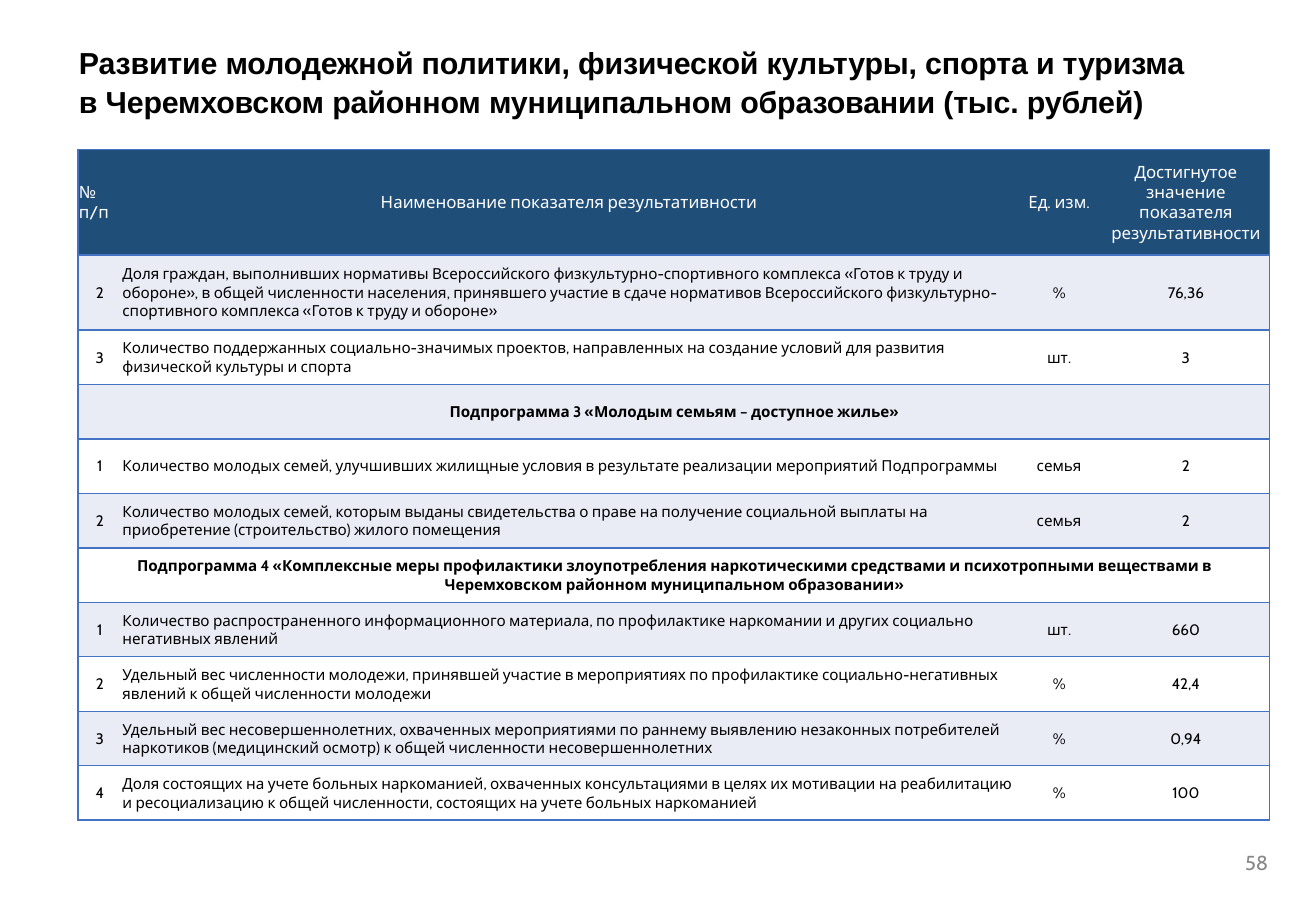
from lxml.etree import SubElement
from pptx import Presentation
from pptx.dml.color import RGBColor
from pptx.enum.text import MSO_ANCHOR, MSO_AUTO_SIZE, PP_ALIGN
from pptx.oxml.ns import qn
from pptx.util import Cm, Pt

BLACK = RGBColor(0x00, 0x00, 0x00)
WHITE = RGBColor(0xFF, 0xFF, 0xFF)
GRAY = RGBColor(0x88, 0x88, 0x88)
NAVY = RGBColor(0x1F, 0x4E, 0x79)
BLUE = RGBColor(0x44, 0x72, 0xC4)
BAND = RGBColor(0xE9, 0xEB, 0xF5)
NO_GRID_STYLE = "{2D5ABB26-0587-4C30-8999-92F81FD0307C}"

TITLE = ("Развитие молодежной политики, физической культуры, спорта и туризма "
         "в Черемховском районном муниципальном образовании (тыс. рублей)")
PAGE = "58"
ROWS = [
    ("№ п/п", "Наименование показателя результативности", "Ед. изм.",
     "Достигнутое значение показателя результативности"),
    ("2", "Доля граждан, выполнивших нормативы Всероссийского физкультурно-спортивного "
     "комплекса «Готов к труду и обороне», в общей численности населения, принявшего "
     "участие в сдаче нормативов Всероссийского физкультурно-спортивного комплекса "
     "«Готов к труду и обороне»", "%", "76,36"),
    ("3", "Количество поддержанных социально-значимых проектов, направленных на создание "
     "условий для развития физической культуры и спорта", "шт.", "3"),
    ("Подпрограмма 3 «Молодым семьям – доступное жилье»",),
    ("1", "Количество молодых семей, улучшивших жилищные условия в результате реализации "
     "мероприятий Подпрограммы", "семья", "2"),
    ("2", "Количество молодых семей, которым выданы свидетельства о праве на получение "
     "социальной выплаты на приобретение (строительство) жилого помещения", "семья", "2"),
    ("Подпрограмма 4 «Комплексные меры профилактики злоупотребления наркотическими "
     "средствами и психотропными веществами в Черемховском районном муниципальном "
     "образовании»",),
    ("1", "Количество распространенного информационного материала, по профилактике "
     "наркомании и других социально негативных явлений", "шт.", "660"),
    ("2", "Удельный вес численности молодежи, принявшей участие в мероприятиях по "
     "профилактике социально-негативных явлений к общей численности молодежи", "%", "42,4"),
    ("3", "Удельный вес несовершеннолетних, охваченных мероприятиями по раннему выявлению "
     "незаконных потребителей наркотиков (медицинский осмотр) к общей численности "
     "несовершеннолетних", "%", "0,94"),
    ("4", "Доля состоящих на учете больных наркоманией, охваченных консультациями в целях "
     "их мотивации на реабилитацию и ресоциализацию к общей численности, состоящих на "
     "учете больных наркоманией", "%", "100"),
]
COL_WIDTHS = [0.91, 18.7, 1.8, 3.5]
ROW_HEIGHTS = [2.2, 1.57] + [1.14] * (len(ROWS) - 2)
LEFT = 1.63


def write(tf, text, size=9, font="Cabin", color=BLACK, bold=False,
          align=PP_ALIGN.LEFT, spacing=None, tracking=0):
    p = tf.paragraphs[0]
    p.alignment = align
    p.line_spacing = spacing
    r = p.add_run()
    r.text = text
    r.font.size = Pt(size)
    r.font.name = font
    r.font.bold = bold
    r.font.color.rgb = color
    if tracking:
        r.font._element.set("spc", str(tracking))


def set_insets(target, left=0, top=0, right=0, bottom=0):
    target.margin_left, target.margin_top = Cm(left), Cm(top)
    target.margin_right, target.margin_bottom = Cm(right), Cm(bottom)


def add_borders(cell, sides):
    tcPr = cell._tc.get_or_add_tcPr()
    for side in sides:
        ln = SubElement(tcPr, qn(f"a:ln{side}"), w=str(Pt(1)))
        fill = SubElement(ln, qn("a:solidFill"))
        SubElement(fill, qn("a:srgbClr"), val=str(BLUE))


prs = Presentation()
prs.slide_width, prs.slide_height = Cm(27.51), Cm(19.05)
s = prs.slides.add_slide(prs.slide_layouts[5])

title = s.shapes.title
title.left, title.top, title.width, title.height = Cm(LEFT), Cm(0.86), Cm(23.34), Cm(1.57)
tf = title.text_frame
tf.auto_size = MSO_AUTO_SIZE.NONE
tf.vertical_anchor = MSO_ANCHOR.TOP
set_insets(tf, left=0.02, top=0.02)
write(tf, TITLE, size=18, font="Arial", bold=True, spacing=1.06, tracking=-10)

frame = s.shapes.add_table(len(ROWS), len(COL_WIDTHS), Cm(LEFT), Cm(3.13),
                           Cm(sum(COL_WIDTHS)), Cm(sum(ROW_HEIGHTS)))
table = frame.table
table.first_row = table.horz_banding = False
table._tbl.tblPr.find(qn("a:tableStyleId")).text = NO_GRID_STYLE
for col, width in zip(table.columns, COL_WIDTHS):
    col.width = Cm(width)
for row, height in zip(table.rows, ROW_HEIGHTS):
    row.height = Cm(height)

last = len(COL_WIDTHS) - 1
for i, values in enumerate(ROWS):
    header, section = i == 0, len(values) == 1
    if section:
        table.cell(i, 0).merge(table.cell(i, last))
    for j in range(last + 1):
        cell = table.cell(i, j)
        sides = ["L"] * (j == 0) + ["R"] * (j == last or section) + ["T", "B"]
        add_borders(cell, sides)
        cell.fill.solid()
        cell.fill.fore_color.rgb = NAVY if header else BAND if i % 2 else WHITE
        cell.vertical_anchor = MSO_ANCHOR.MIDDLE
        set_insets(cell, left=0.02, top=0.02, right=0.02)
        if j < len(values):
            at_left = j == (0 if header else 1)
            write(cell.text_frame, values[j], size=10 if header else 9,
                  color=WHITE if header else BLACK, bold=section,
                  align=PP_ALIGN.LEFT if at_left else PP_ALIGN.CENTER)

tf = s.shapes.add_textbox(Cm(25.93), Cm(17.78), Cm(0.69), Cm(0.53)).text_frame
tf.word_wrap = True
set_insets(tf, left=0.1)
write(tf, PAGE, size=12, color=GRAY, spacing=Pt(14.2), tracking=-10)

prs.save("out.pptx")
